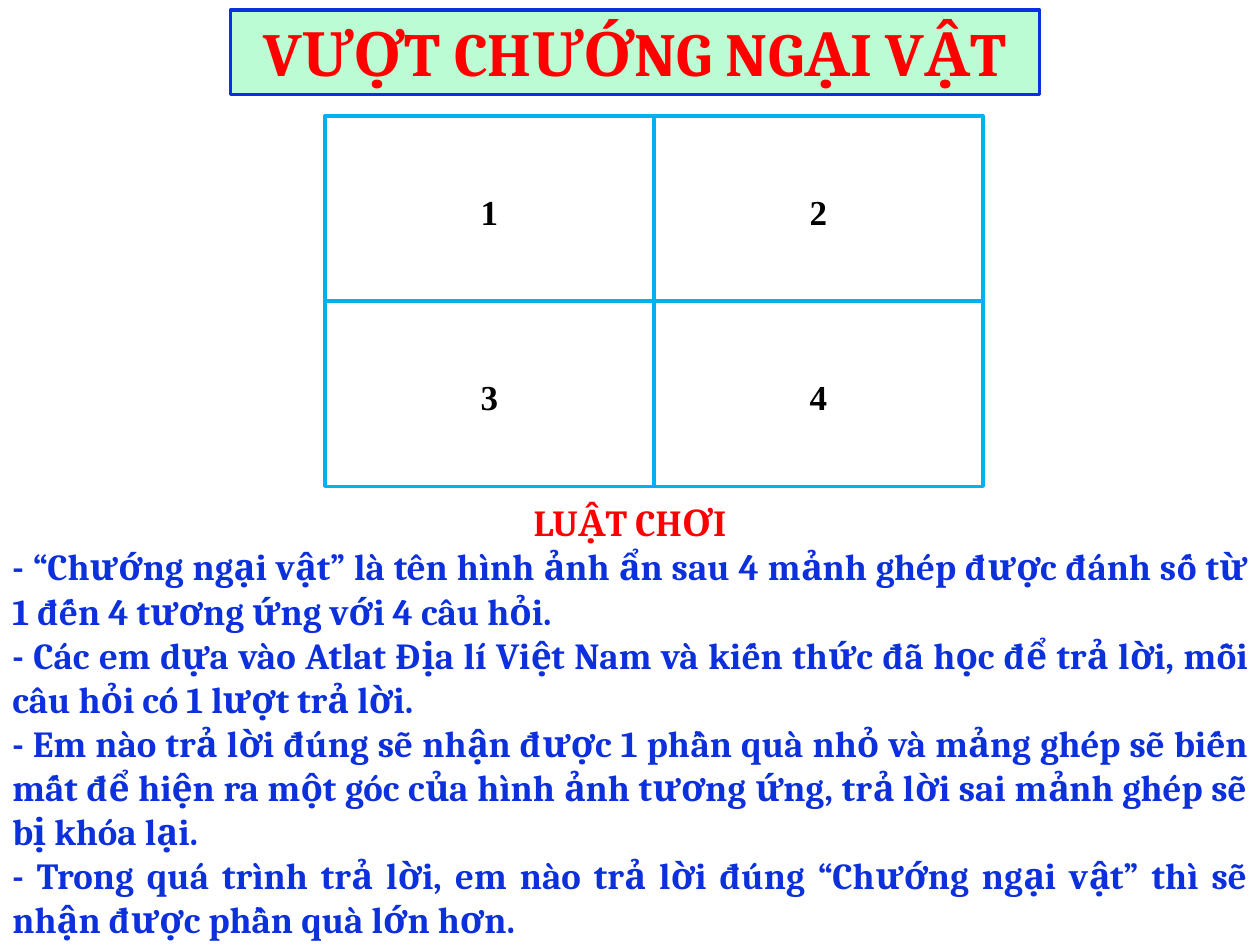
from pptx import Presentation
from pptx.dml.color import RGBColor
from pptx.enum import shapes, text
from pptx.util import Inches, Pt

RED = RGBColor(0xFF, 0x00, 0x00)
BLUE = RGBColor(0x0D, 0x30, 0xDD)
SKY = RGBColor(0x00, 0xB0, 0xF0)
MINT = RGBColor(0xBC, 0xFC, 0xD4)
WHITE = RGBColor(0xFF, 0xFF, 0xFF)
BLACK = RGBColor(0x00, 0x00, 0x00)

TITLE = "VƯỢT CHƯỚNG NGẠI VẬT"
PIECES = [["1", "2"], ["3", "4"]]
RULES_HEADING = "LUẬT CHƠI"
RULES = [
    "- “Chướng ngại vật” là tên hình ảnh ẩn sau 4 mảnh ghép được đánh số từ 1 đến 4 tương ứng với 4 câu hỏi.",
    "- Các em dựa vào Atlat Địa lí Việt Nam và kiến thức đã học để trả lời, mỗi câu hỏi có 1 lượt trả lời.",
    "- Em nào trả lời đúng sẽ nhận được 1 phần quà nhỏ và mảng ghép sẽ biến mất để hiện ra một góc của hình ảnh tương ứng, trả lời sai mảnh ghép sẽ bị khóa lại.",
    "- Trong quá trình trả lời, em nào trả lời đúng “Chướng ngại vật” thì sẽ nhận được phần quà lớn hơn.",
]

CENTER, JUSTIFY = text.PP_ALIGN.CENTER, text.PP_ALIGN.JUSTIFY
HEADING_FORMAT = {"name": "Cambria", "size": Pt(21), "bold": True}
TITLE_FORMAT = {**HEADING_FORMAT, "size": Pt(35)}
PIECE_FORMAT = {"name": "Times New Roman", "size": Pt(20), "bold": True}
PIECE_SPACING = {"line_spacing": 1.15, "space_after": Pt(10)}

GRID_LEFT, GRID_TOP = 2.58, 0.92
PIECE_WIDTH, PIECE_HEIGHT = 2.61, 1.47


def write(paragraph, words, color, font_format, align=CENTER, spacing=None):
    run = paragraph.add_run()
    run.text = words
    run.font.color.rgb = color
    for key, value in font_format.items():
        setattr(run.font, key, value)
    for key, value in {"alignment": align, **(spacing or {})}.items():
        setattr(paragraph, key, value)


def add_box(slide, place, fill, line):
    box = slide.shapes.add_shape(shapes.MSO_SHAPE.RECTANGLE, *map(Inches, place))
    box.shadow.inherit = False
    box.fill.solid()
    box.fill.fore_color.rgb = fill
    box.line.color.rgb = line
    box.line.width = Pt(2)
    box.text_frame.vertical_anchor = text.MSO_ANCHOR.MIDDLE
    return box.text_frame.paragraphs[0]


def main():
    prs = Presentation()
    prs.slide_width, prs.slide_height = Inches(10), Inches(7.5)
    slide = prs.slides.add_slide(prs.slide_layouts[6])

    # Title banner
    banner = add_box(slide, (1.83, 0.08, 6.42, 0.67), MINT, BLUE)
    write(banner, TITLE, RED, TITLE_FORMAT)

    # Rules of the game
    rules = slide.shapes.add_textbox(*map(Inches, (0, 3.92, 10, 3.64))).text_frame
    rules.word_wrap = True
    rules.auto_size = text.MSO_AUTO_SIZE.SHAPE_TO_FIT_TEXT
    write(rules.paragraphs[0], RULES_HEADING, RED, HEADING_FORMAT)
    for rule in RULES:
        write(rules.add_paragraph(), rule, BLUE, HEADING_FORMAT, JUSTIFY)

    # Numbered puzzle pieces
    for row, numbers in enumerate(PIECES):
        for column, number in enumerate(numbers):
            place = (GRID_LEFT + column * PIECE_WIDTH, GRID_TOP + row * PIECE_HEIGHT,
                     PIECE_WIDTH, PIECE_HEIGHT)
            piece = add_box(slide, place, WHITE, SKY)
            write(piece, number, BLACK, PIECE_FORMAT, spacing=PIECE_SPACING)

    prs.save("out.pptx")


if __name__ == "__main__":
    main()
